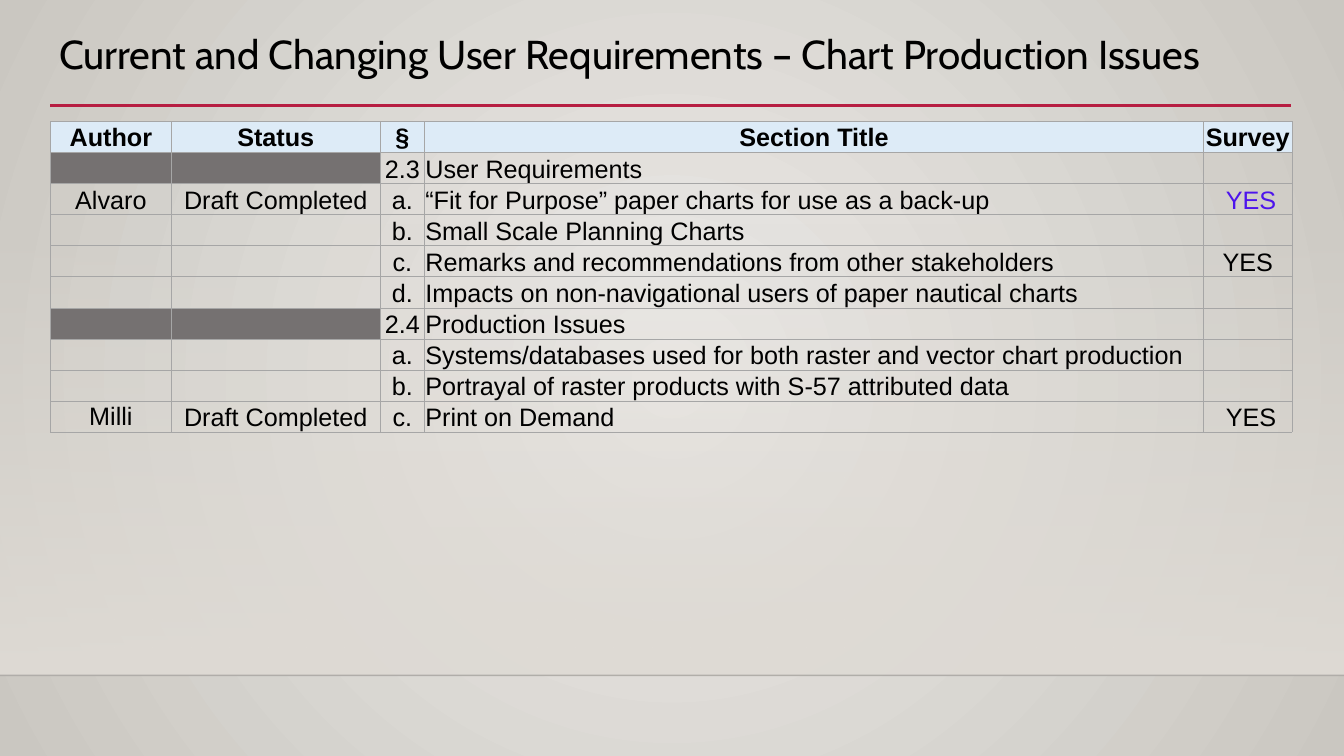
from lxml import etree
from pptx import Presentation
from pptx import util as u
from pptx.dml import color
from pptx.enum import shapes, text
from pptx.oxml import ns

COLOURS = {
    "ink": "000000", "rule": "B71E42", "floor": "000001", "header": "DDEBF7",
    "dark": "757171", "grid": "A6A6A6", "violet": "4D14EC",
    "centre": "ECEAE7", "edge": "CAC7C1", "haze": "DFDBD5",
}
COLUMNS = [3.05, 5.26, 1.12, 19.63, 2.23]
DONE = "Draft Completed"
ROWS = [
    ["Author", "Status", "§", "Section Title", "Survey"],
    ["", "", "2.3", "User Requirements", ""],
    ["Alvaro", DONE, "a.", "“Fit for Purpose” paper charts for use as a back-up", " YES"],
    ["", "", "b.", "Small Scale Planning Charts", ""],
    ["", "", "c.", "Remarks and recommendations from other stakeholders", "YES"],
    ["", "", "d.", "Impacts on non-navigational users of paper nautical charts", ""],
    ["", "", "2.4", "Production Issues", ""],
    ["", "", "a.", "Systems/databases used for both raster and vector chart production", ""],
    ["", "", "b.", "Portrayal of raster products with S-57 attributed data", ""],
    ["Milli", DONE, "c.", "Print on Demand", " YES"],
]


def rgb(name):
    return color.RGBColor.from_string(COLOURS[name])


def add(parent, tag, **attributes):
    return etree.SubElement(parent, ns.qn(tag), **attributes)


class SlideBuilder:
    """Holds the style and the current slide, and adds elements to it."""

    def __init__(self, page):
        self.page = page
        self.body_font, self.body_size = "Arial", u.Pt(18)
        self.title_font, self.title_size = "Cabin", u.Pt(28.8)

    def gradient(self, fill, start, end):
        fill.gradient()
        for stop, name in zip(fill.gradient_stops, (start, end)):
            stop.color.rgb = rgb(name)
        fill.gradient_stops[0].position = 0
        fill.gradient_stops[1].position = 1

    def background(self):
        self.gradient(self.page.background.fill, "centre", "edge")
        gradient = next(self.page.element.iter(ns.qn("a:gradFill")))
        gradient.remove(gradient.find(ns.qn("a:lin")))
        circle = add(gradient, "a:path", path="circle")
        add(circle, "a:fillToRect", l="50000", t="50000", r="50000", b="50000")

    def haze(self, left, top, width, height):
        box = self.page.shapes.add_shape(
            shapes.MSO_SHAPE.RECTANGLE, u.Cm(left), u.Cm(top), u.Cm(width), u.Cm(height))
        box.shadow.inherit = False
        box.line.fill.background()
        self.gradient(box.fill, "haze", "haze")
        gradient = next(box.element.iter(ns.qn("a:gradFill")))
        gradient.find(ns.qn("a:lin")).set("ang", "5400000")
        add(next(gradient.iter(ns.qn("a:srgbClr"))), "a:alpha", val="0")

    def line(self, left, right, y, name, weight, opacity=100):
        rule = self.page.shapes.add_connector(
            shapes.MSO_CONNECTOR.STRAIGHT, u.Cm(left), u.Cm(y), u.Cm(right), u.Cm(y))
        rule.line.color.rgb = rgb(name)
        rule.line.width = u.Pt(weight)
        if opacity < 100:
            shade = next(rule.element.iter(ns.qn("a:srgbClr")))
            add(shade, "a:alpha", val=str(opacity * 1000))
        add(rule.element.spPr, "a:effectLst")

    def title(self, words, left, top, width, height):
        box = self.page.shapes.add_textbox(u.Cm(left), u.Cm(top), u.Cm(width), u.Cm(height))
        frame = box.text_frame
        frame.word_wrap = True
        frame.vertical_anchor = text.MSO_ANCHOR.MIDDLE
        frame.text = words
        para = frame.paragraphs[0]
        para.line_spacing = 0.9
        font = para.runs[0].font
        font.name, font.size = self.title_font, self.title_size
        font.color.rgb = rgb("ink")

    def cell(self, cell, words, centred, bold, ink, fill, anchor):
        cell.margin_left = cell.margin_right = cell.margin_top = u.Cm(0.02)
        cell.margin_bottom = 0
        cell.vertical_anchor = anchor
        cell.text_frame.text = words
        para = cell.text_frame.paragraphs[0]
        para.alignment = text.PP_ALIGN.CENTER if centred else text.PP_ALIGN.LEFT
        for span in para.runs:
            font = span.font
            font.name, font.size, font.bold = self.body_font, self.body_size, bold
            font.color.rgb = rgb(ink)
        if not words:
            ending = add(para._p, "a:endParaRPr", sz=str(self.body_size.centipoints))
            add(ending, "a:latin", typeface=self.body_font)
        properties = cell._tc.get_or_add_tcPr()
        for side in ("a:lnL", "a:lnR", "a:lnT", "a:lnB"):
            border = add(properties, side, w=str(u.Pt(0.5)))
            add(add(border, "a:solidFill"), "a:srgbClr", val=COLOURS["grid"])
        if fill:
            cell.fill.solid()
            cell.fill.fore_color.rgb = rgb(fill)
        else:
            cell.fill.background()

    def table(self, rows, columns, left, top, row_height):
        frame = self.page.shapes.add_table(
            len(rows), len(columns), u.Cm(left), u.Cm(top),
            u.Cm(sum(columns)), u.Cm(row_height * len(rows)))
        table = frame.table
        table.horz_banding = False
        for column, width in zip(table.columns, columns):
            column.width = u.Cm(width)
        for r, row in enumerate(rows):
            table.rows[r].height = u.Cm(row_height)
            header, section = r == 0, row[2].startswith("2.")
            for c, words in enumerate(row):
                fill = "header" if header else "dark" if section and c < 2 else None
                ink = "violet" if (r, c) == (2, 4) else "ink"
                middle = header or words == "Milli"
                anchor = text.MSO_ANCHOR.MIDDLE if middle else text.MSO_ANCHOR.BOTTOM
                self.cell(table.cell(r, c), words, header or c != 3, header, ink, fill, anchor)


def main():
    deck = Presentation()
    deck.slide_width, deck.slide_height = u.Cm(33.87), u.Cm(19.05)
    builder = SlideBuilder(deck.slides.add_slide(deck.slide_layouts[6]))
    builder.background()
    builder.haze(0, 5.61, 33.87, 11.41)
    builder.line(0, 33.87, 17.02, "floor", 1, opacity=20)
    builder.line(1.27, 32.54, 2.66, "rule", 2.5)
    builder.title("Current and Changing User Requirements – Chart Production Issues",
                  1.24, 0.71, 32.2, 1.42)
    builder.table(ROWS, COLUMNS, 1.27, 3.06, 0.64)
    deck.save("out.pptx")


if __name__ == "__main__":
    main()
